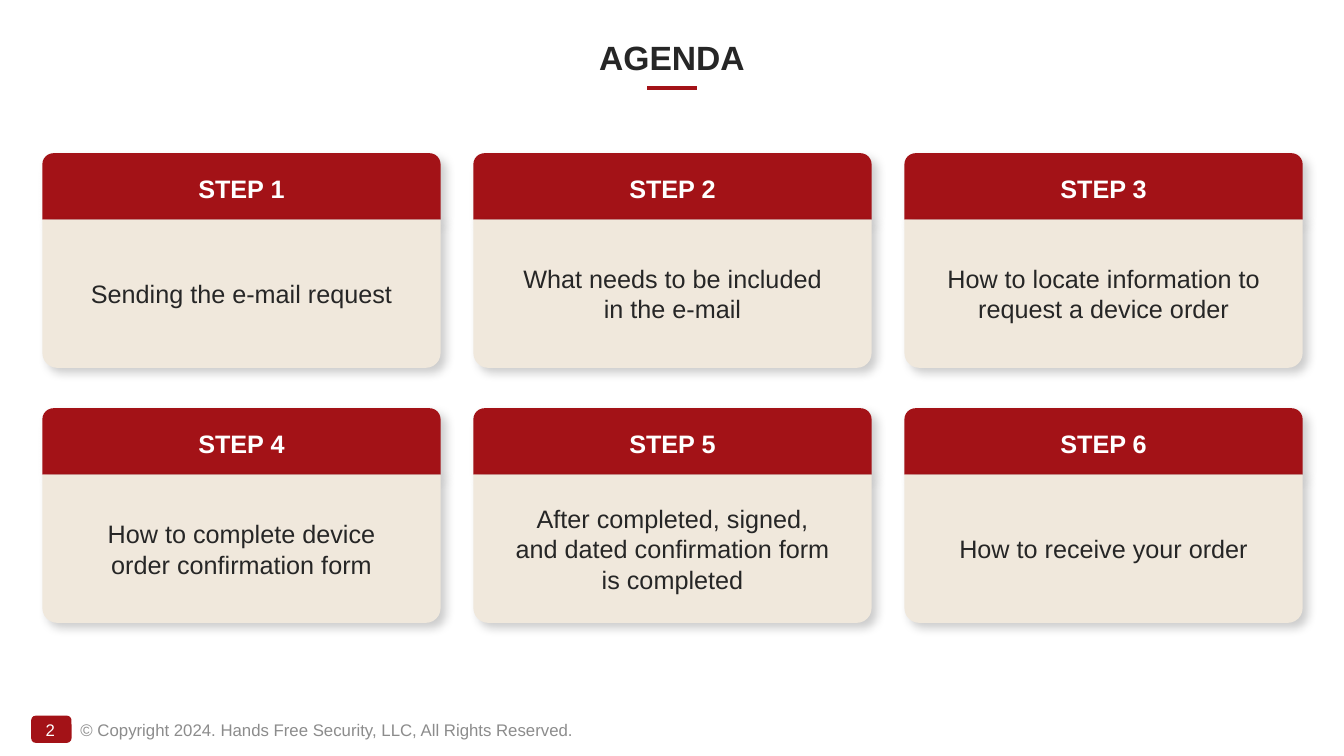
from lxml import etree
from pptx import Presentation
from pptx.dml.color import RGBColor
from pptx.enum import shapes, text
from pptx.oxml.ns import qn
from pptx.util import Inches, Pt

RED = RGBColor(0xA3, 0x12, 0x17)
CREAM = RGBColor(0xF0, 0xE8, 0xDC)
DARK = RGBColor(0x26, 0x26, 0x26)
GRAY = RGBColor(0x8C, 0x8C, 0x8C)
WHITE = RGBColor(0xFF, 0xFF, 0xFF)

# Description of each step and the number of lines it wraps to
STEPS = [
    ("Sending the e-mail request", 1),
    ("What needs to be included in the e-mail", 2),
    ("How to locate information to request a device order", 2),
    ("How to complete device order confirmation form", 2),
    ("After completed, signed, and dated confirmation form is completed", 3),
    ("How to receive your order", 1),
]
COLUMNS = 3
LEFT, TOP = 0.42, 1.52
COLUMN_STEP, ROW_STEP = 4.275, 2.53
CARD_WIDTH, HEADER_HEIGHT, BODY_HEIGHT = 3.95, 0.66, 1.47
LABEL_WIDTH, LINE_HEIGHT, LABEL_PADDING = 3.35, 0.3, 0.1


def write(frame, words, size, color, bold=False, align=text.PP_ALIGN.CENTER,
          anchor=text.MSO_ANCHOR.MIDDLE):
    frame.word_wrap = True
    frame.vertical_anchor = anchor
    paragraph = frame.paragraphs[0]
    paragraph.text = words
    paragraph.alignment = align
    font = paragraph.font
    font.name, font.size, font.bold = "Arial", Pt(size), bold
    font.color.rgb = color


def add_label(slide, box, words, size, color, **style):
    label = slide.shapes.add_textbox(*map(Inches, box))
    write(label.text_frame, words, size, color, **style)


def add_block(slide, preset, box, color):
    block = slide.shapes.add_shape(preset, *map(Inches, box))
    block.shadow.inherit = False
    block.fill.solid()
    block.fill.fore_color.rgb = color
    block.line.fill.background()
    return block


def cast_shadow(block):
    effects = block._element.spPr.find(qn("a:effectLst"))
    shadow = etree.SubElement(
        effects, qn("a:outerShdw"), blurRad=str(Pt(7)), dist=str(Pt(5)),
        dir=str(45 * 60000), algn="tl", rotWithShape="0")
    black = etree.SubElement(shadow, qn("a:srgbClr"), val="000000")
    etree.SubElement(black, qn("a:alpha"), val="20000")


def add_card(slide, index, description, lines):
    row, column = divmod(index, COLUMNS)
    left = LEFT + column * COLUMN_STEP
    top = TOP + row * ROW_STEP
    body_top = top + HEADER_HEIGHT
    rounded_top = shapes.MSO_SHAPE.ROUND_2_SAME_RECTANGLE

    header = add_block(slide, rounded_top,
                       (left, top, CARD_WIDTH, HEADER_HEIGHT), RED)
    cast_shadow(header)
    write(header.text_frame, f"STEP {index + 1}", 18, WHITE, bold=True)

    body = add_block(slide, rounded_top,
                     (left, body_top, CARD_WIDTH, BODY_HEIGHT), CREAM)
    body.adjustments[0] = 0.1
    body._element.spPr.xfrm.set("flipV", "1")
    cast_shadow(body)

    height = LABEL_PADDING + lines * LINE_HEIGHT
    add_label(slide, (left + (CARD_WIDTH - LABEL_WIDTH) / 2,
                      body_top + (BODY_HEIGHT - height) / 2,
                      LABEL_WIDTH, height), description, 18, DARK)


def add_heading(slide):
    title = slide.shapes.title
    title.left, title.top = Inches(3.33), Inches(0.32)
    title.width, title.height = Inches(6.67), Inches(0.5)
    write(title.text_frame, "AGENDA", 24, DARK, bold=True,
          anchor=text.MSO_ANCHOR.TOP)
    title.text_frame.auto_size = text.MSO_AUTO_SIZE.SHAPE_TO_FIT_TEXT

    underline = slide.shapes.add_connector(
        shapes.MSO_CONNECTOR.STRAIGHT,
        *map(Inches, (6.42, 0.87, 6.91, 0.87)))
    underline.line.color.rgb = RED
    underline.line.width = Pt(3)
    etree.SubElement(underline._element.spPr, qn("a:effectLst"))


def add_footer(slide):
    add_block(slide, shapes.MSO_SHAPE.ROUNDED_RECTANGLE,
              (0.31, 7.1, 0.4, 0.27), RED)
    add_label(slide, (0.28, 7.09, 0.44, 0.3), "2", 12, WHITE)
    add_label(slide, (0.7, 7.09, 5.47, 0.3),
              "© Copyright 2024. Hands Free Security, LLC, All Rights Reserved.",
              12, GRAY, align=text.PP_ALIGN.LEFT)


def main():
    deck = Presentation()
    deck.slide_width, deck.slide_height = Inches(13.33), Inches(7.5)
    slide = deck.slides.add_slide(deck.slide_layouts.get_by_name("Title Only"))
    add_footer(slide)
    add_heading(slide)
    for index, (description, lines) in enumerate(STEPS):
        add_card(slide, index, description, lines)
    deck.save("out.pptx")


if __name__ == "__main__":
    main()
